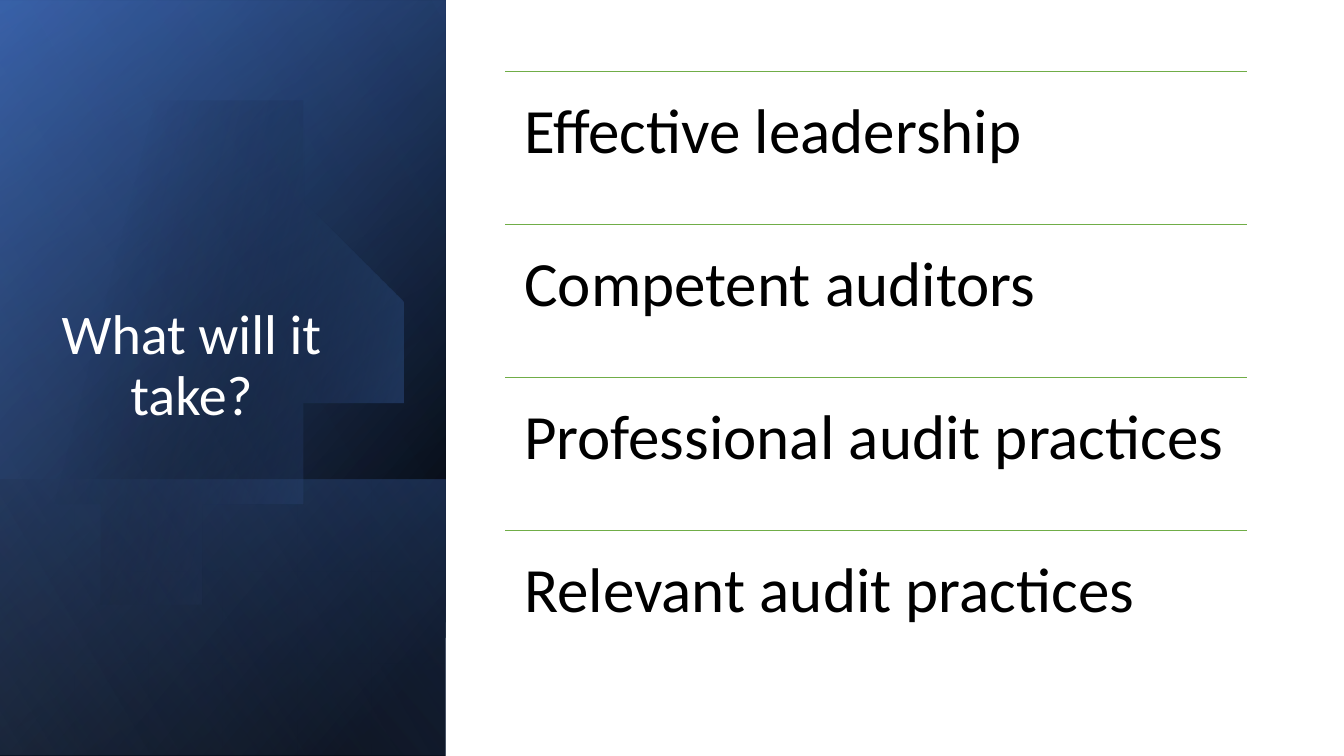
from pptx import Presentation
from pptx.util import Inches, Pt
from pptx.dml.color import RGBColor
from pptx.enum.shapes import MSO_SHAPE as Form, MSO_CONNECTOR as Join
from pptx.enum.text import PP_ALIGN as Align, MSO_ANCHOR as Anchor
from pptx.oxml import parse_xml
from pptx.oxml.ns import nsdecls, qn
from lxml import etree

BLACK = RGBColor(0x00, 0x00, 0x00)
WHITE = RGBColor(0xFF, 0xFF, 0xFF)
NAVY = RGBColor(0x2F, 0x55, 0x97)
BLUE = RGBColor(0x44, 0x72, 0xC4)
PALE = RGBColor(0x8F, 0xAA, 0xDC)
GREEN = RGBColor(0x70, 0xAD, 0x47)

ITEMS = ["Effective leadership", "Competent auditors",
         "Professional audit practices", "Relevant audit practices"]
START = (1.49, 1.1)
UPPER = [
    [(2.46, 1.12), (3.35, 1.77), (3.63, 2.75)],
    [(3.98, 3.97), (3.28, 5.23), (2.07, 5.58)],
    [(1.31, 5.8), (0.53, 5.61), (-0.03, 5.14)],
    [(-0.15, 5.03)],
    [(-0.15, 1.75)],
    [(0, 1.61)],
    [(0.23, 1.42), (0.5, 1.28), (0.8, 1.19)],
    [(1.03, 1.13), (1.26, 1.1), (1.49, 1.1)],
]


def trace(start, parts, steps=24):
    dots = [start]
    for part in parts:
        if len(part) == 1:
            dots += part
            continue
        a, (b, c, d) = dots[-1], part
        for i in range(1, steps + 1):
            t = i / steps
            u = 1 - t
            dots.append(tuple(
                u**3 * p + 3 * u * u * t * q + 3 * u * t * t * r + t**3 * s
                for p, q, r, s in zip(a, b, c, d)))
    return dots


class Deck:
    font = "Calibri"

    def __init__(self):
        self.show = Presentation()
        self.show.slide_width = Inches(13.33)
        self.show.slide_height = Inches(7.5)
        self.slide = self.show.slides.add_slide(self.show.slide_layouts[6])
        self.shapes = self.slide.shapes

    def shade(self, shape, stops, angle):
        shape.shadow.inherit = False
        shape.line.fill.background()
        shape.fill.background()
        marks = "".join(
            f'<a:gs pos="{pos * 1000}"><a:srgbClr val="{color}">'
            f'<a:alpha val="{alpha * 1000}"/></a:srgbClr></a:gs>'
            for pos, color, alpha in stops)
        grad = parse_xml(
            f'<a:gradFill {nsdecls("a")} rotWithShape="1"><a:gsLst>{marks}'
            f'</a:gsLst><a:lin ang="{angle * 60000}" scaled="0"/></a:gradFill>')
        props = shape._element.spPr
        props.replace(props.find(qn("a:noFill")), grad)

    def panel(self, x, y, w, h, stops, angle):
        shape = self.shapes.add_shape(
            Form.RECTANGLE, Inches(x), Inches(y), Inches(w), Inches(h))
        shape.rotation = 90
        shape._element.spPr.find(qn("a:xfrm")).set("flipH", "1")
        self.shade(shape, stops, angle)

    def curve(self, dots, stops, angle):
        pen = self.shapes.build_freeform(
            *dots[0], scale=Inches(1))
        pen.add_line_segments(dots[1:], close=True)
        self.shade(pen.convert_to_shape(), stops, angle)

    def text(self, words, x, y, w, h, size, color, inset=None,
             align=Align.LEFT, anchor=Anchor.TOP, pitch=1.0):
        frame = self.shapes.add_textbox(
            Inches(x), Inches(y), Inches(w), Inches(h)).text_frame
        frame.word_wrap = True
        frame.vertical_anchor = anchor
        if inset is not None:
            frame.margin_left = frame.margin_right = Inches(inset)
            frame.margin_top = frame.margin_bottom = Inches(inset)
        para = frame.paragraphs[0]
        para.alignment = align
        para.line_spacing = pitch
        para.space_after = Pt(6)
        run = para.add_run()
        run.text = words
        run.font.name = self.font
        run.font.size = Pt(size)
        run.font.color.rgb = color

    def rule(self, x, y, w):
        line = self.shapes.add_connector(
            Join.STRAIGHT, Inches(x), Inches(y), Inches(x + w), Inches(y))
        line.line.color.rgb = GREEN
        line.line.width = Pt(1)
        etree.SubElement(line._element.spPr, qn("a:effectLst"))


def main():
    deck = Deck()
    deck.panel(-1.54, 1.54, 7.5, 4.42, [(8, BLACK, 100), (100, NAVY, 100)], 50)
    deck.panel(-1.54, 1.55, 7.5, 4.42, [(0, BLACK, 0), (99, BLUE, 46)], 30)
    deck.panel(0.84, 3.92, 2.74, 4.42, [(2, BLUE, 29), (100, BLACK, 30)], 130)
    deck.curve(trace(START, UPPER), [(29, BLACK, 0), (100, BLUE, 43)], 14)
    deck.panel(-1.54, 1.53, 7.5, 4.42, [(0, BLACK, 0), (99, PALE, 11)], 120)
    deck.text("What will it take?", 0.15, 0.59, 3.5, 3.7, 40, WHITE,
              align=Align.CENTER, anchor=Anchor.BOTTOM, pitch=0.9)
    left, top, wide, high = 5.01, 0.71, 7.36, 1.517
    for i, item in enumerate(ITEMS):
        y = top + i * high
        deck.rule(left, y, wide)
        deck.text(item, left, y, wide, high, 45, BLACK, inset=0.19)
    deck.show.save("out.pptx")


if __name__ == "__main__":
    main()
